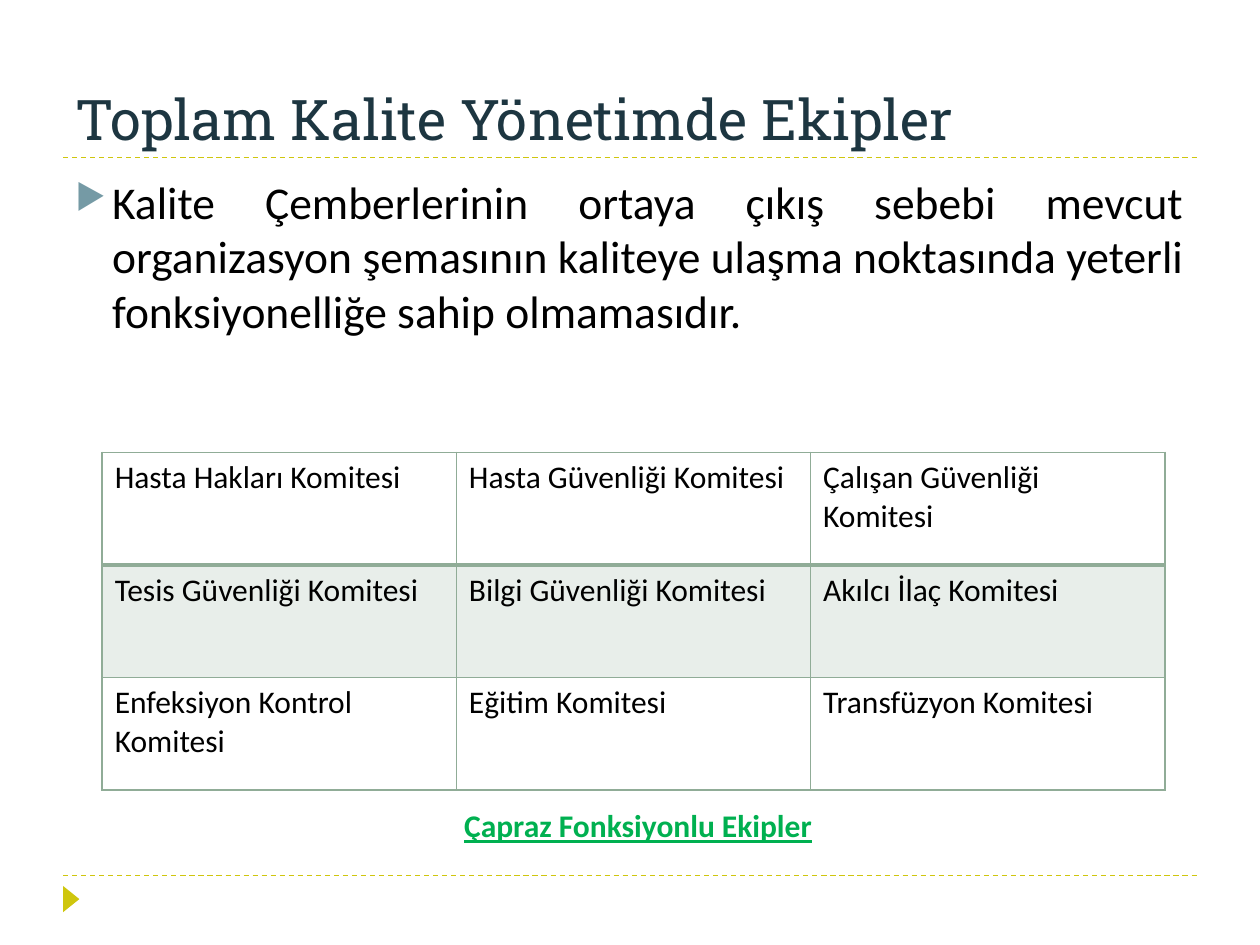
import pptx
import pptx.util
import pptx.dml.color
import pptx.enum.dml
import pptx.enum.shapes
import pptx.enum.text
import pptx.oxml
import pptx.oxml.ns
from lxml import etree

Cm = pptx.util.Cm
Pt = pptx.util.Pt
PP_ALIGN = pptx.enum.text.PP_ALIGN
qn = pptx.oxml.ns.qn

COLORS = {
    "accent": "CFC60D",
    "title": "1D3641",
    "bullet": "759AA5",
    "text": "000000",
    "grid": "90AC97",
    "caption": "00B050",
}
COMMITTEES = [
    ["Hasta Hakları Komitesi", "Hasta Güvenliği Komitesi", "Çalışan Güvenliği Komitesi"],
    ["Tesis Güvenliği Komitesi", "Bilgi Güvenliği Komitesi", "Akılcı İlaç Komitesi"],
    ["Enfeksiyon Kontrol Komitesi", "Eğitim Komitesi", "Transfüzyon Komitesi"],
]


def rgb(name):
    return pptx.dml.color.RGBColor.from_string(COLORS[name])


def style_text(paragraph, size, color, font="Calibri"):
    for run in paragraph.runs:
        run.font.size = Pt(size)
        run.font.name = font
        run.font.color.rgb = rgb(color)


def add_text(slide, box, text, size, color, font="Calibri"):
    frame = slide.shapes.add_textbox(*map(Cm, box)).text_frame
    frame.word_wrap = True
    frame.text = text
    style_text(frame.paragraphs[0], size, color, font)
    return frame


def add_divider(slide, left, top, width):
    divider = slide.shapes.add_connector(
        pptx.enum.shapes.MSO_CONNECTOR.STRAIGHT,
        Cm(left), Cm(top), Cm(left + width), Cm(top))
    divider.line.color.rgb = rgb("accent")
    divider.line.width = Pt(0.75)
    divider.line.dash_style = pptx.enum.dml.MSO_LINE.DASH
    etree.SubElement(divider._element.spPr, qn("a:effectLst"))


def add_footer(slide, left, top, width):
    add_divider(slide, left, top, width)
    # Page marker pointing right
    marker = slide.shapes.add_shape(
        pptx.enum.shapes.MSO_SHAPE.ISOSCELES_TRIANGLE,
        Cm(left - 0.1), Cm(top + 0.31), Cm(0.53), Cm(0.33))
    marker.rotation = 90
    marker.shadow.inherit = False
    marker.fill.solid()
    marker.fill.fore_color.rgb = rgb("accent")
    marker.line.fill.background()


def add_title(slide, left, top, width, height):
    title = add_text(slide, (left, top, width, height),
                     "Toplam Kalite Yönetimde Ekipler", 32, "title", "Roboto Slab")
    title.vertical_anchor = pptx.enum.text.MSO_ANCHOR.BOTTOM
    add_divider(slide, left, top + height, width)


def add_body(slide, *box):
    body = add_text(
        slide, box,
        "Kalite Çemberlerinin ortaya çıkış sebebi mevcut organizasyon şemasının "
        "kaliteye ulaşma noktasında yeterli fonksiyonelliğe sahip olmamasıdır.",
        26, "text")
    reason = body.paragraphs[0]
    reason.alignment = PP_ALIGN.JUSTIFY
    reason.space_before = Pt(6)
    # Hanging triangle bullet
    props = reason._p.get_or_add_pPr()
    props.set("marL", str(Cm(0.74)))
    props.set("indent", str(-Cm(0.74)))
    bullet_color = etree.SubElement(props, qn("a:buClr"))
    etree.SubElement(bullet_color, qn("a:srgbClr"), val=COLORS["bullet"])
    etree.SubElement(props, qn("a:buSzPct"), val="76000")
    etree.SubElement(props, qn("a:buChar"), char="▶")


def set_borders(cell, widths):
    """Widths in points, in the order left, right, top, bottom."""
    props = cell._tc.get_or_add_tcPr()
    for index, (side, width) in enumerate(zip("LRTB", widths)):
        border = etree.Element(qn("a:ln" + side), w=str(Pt(width)))
        fill = etree.SubElement(border, qn("a:solidFill"))
        etree.SubElement(fill, qn("a:srgbClr"), val=COLORS["grid"])
        props.insert(index, border)


def add_committees(slide, left, top, width, height):
    rows, cols = len(COMMITTEES), len(COMMITTEES[0])
    table = slide.shapes.add_table(
        rows, cols, Cm(left), Cm(top), Cm(width), Cm(height)).table
    for column in table.columns:
        column.width = Cm(width / cols)
    for r, names in enumerate(COMMITTEES):
        table.rows[r].height = Cm(height / rows)
        for c, name in enumerate(names):
            cell = table.cell(r, c)
            cell.text = name
            style_text(cell.text_frame.paragraphs[0], 18, "text")
            # The middle row is tinted
            if r == 1:
                cell.fill.solid()
                cell.fill.fore_color.rgb = rgb("grid")
                tint = cell._tc.tcPr.find(".//" + qn("a:srgbClr"))
                etree.SubElement(tint, qn("a:alpha"), val="20000")
            else:
                cell.fill.background()
            # A heavier rule under the first row
            set_borders(cell, (1, 1, 2 if r == 1 else 1, 2 if r == 0 else 1))


def add_caption(slide, *box):
    caption = add_text(slide, box, "Çapraz Fonksiyonlu Ekipler", 18, "caption").paragraphs[0]
    caption.alignment = PP_ALIGN.CENTER
    caption.runs[0].font.bold = True
    caption.runs[0].font.underline = True


def main():
    deck = pptx.Presentation()
    deck.slide_width, deck.slide_height = Cm(25.4), Cm(19.05)
    slide = deck.slides.add_slide(deck.slide_layouts[6])
    margin, content = 1.27, 22.86
    add_footer(slide, margin, 17.65, content)
    add_title(slide, margin, 0.43, content, 2.75)
    add_body(slide, margin, 3.38, content, 13.72)
    add_committees(slide, 2.06, 9.12, 21.42, 6.81)
    add_caption(slide, 2.26, 16.13, 21.21, 1.02)
    deck.save("out.pptx")


if __name__ == "__main__":
    main()
